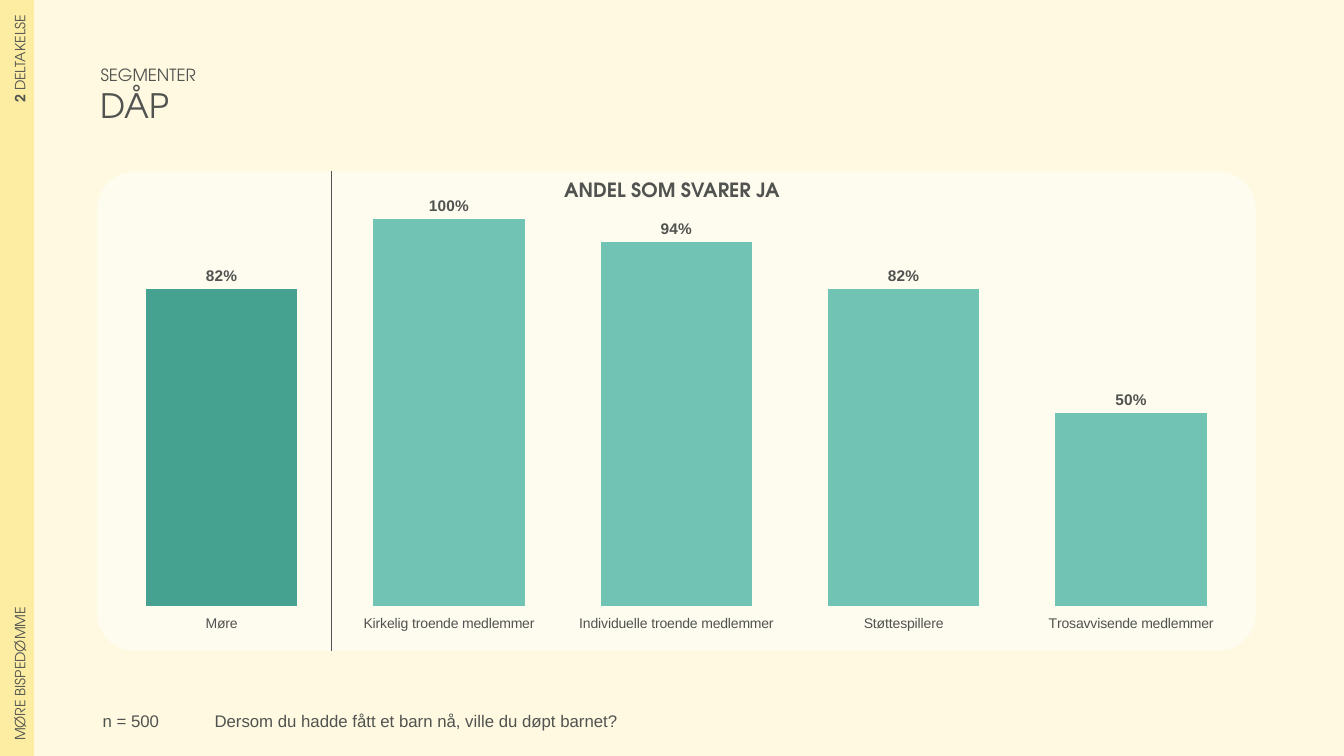
from lxml import etree
from pptx import Presentation
from pptx.chart.data import CategoryChartData
from pptx.dml.color import RGBColor
from pptx.enum.chart import XL_CHART_TYPE, XL_LABEL_POSITION, XL_TICK_LABEL_POSITION, XL_TICK_MARK
from pptx.enum.shapes import MSO_CONNECTOR, MSO_SHAPE
from pptx.enum.text import MSO_ANCHOR, PP_ALIGN
from pptx.oxml import parse_xml
from pptx.oxml.ns import nsdecls, qn
from pptx.util import Inches, Pt

COLUMN_CHART = XL_CHART_TYPE.COLUMN_CLUSTERED
OUTSIDE = XL_LABEL_POSITION.OUTSIDE_END
LOW = XL_TICK_LABEL_POSITION.LOW
NO_TICK = XL_TICK_MARK.NONE
STRAIGHT = MSO_CONNECTOR.STRAIGHT
ROUNDED = MSO_SHAPE.ROUNDED_RECTANGLE
TOP, MIDDLE = MSO_ANCHOR.TOP, MSO_ANCHOR.MIDDLE
LEFT, CENTER, RIGHT = PP_ALIGN.LEFT, PP_ALIGN.CENTER, PP_ALIGN.RIGHT

INK = RGBColor(0x51, 0x53, 0x50)
CREAM = RGBColor(0xFE, 0xF9, 0xE0)
YELLOW = RGBColor(0xFD, 0xED, 0xA2)
WHITE = RGBColor(0xFF, 0xFF, 0xFF)
MINT = RGBColor(0x71, 0xC3, 0xB3)
TEAL = RGBColor(0x45, 0xA2, 0x90)

HEADING, BODY = "TeX Gyre Adventor", "Arial"
COLUMNS, ROWS = 40, 30
PANEL_TOP, PANEL_ROWS = 6.8, 19.04


class Deck:
    """Holds the style and current slide, and places elements on a 40 by 30 grid."""

    def __init__(self):
        self.prs = Presentation()
        self.prs.slide_width, self.prs.slide_height = Inches(13.33), Inches(7.5)
        self.s = self.prs.slides.add_slide(self.prs.slide_layouts[6])
        self.s.background.fill.solid()
        self.s.background.fill.fore_color.rgb = CREAM

    def x(self, columns):
        return round(self.prs.slide_width * columns / COLUMNS)

    def y(self, rows):
        return round(self.prs.slide_height * rows / ROWS)

    def box(self, left, top, width, height):
        return self.x(left), self.y(top), self.x(width), self.y(height)

    def font(self, font, size, name, bold=False):
        font.size, font.name, font.bold = Pt(size), name, bold
        font.color.rgb = INK

    def text(self, place, lines, name, align=LEFT, anchor=TOP, bold=False):
        tf = self.s.shapes.add_textbox(*self.box(*place)).text_frame
        tf.word_wrap = True
        tf.vertical_anchor = anchor
        tf.text = "\n".join(line for line, _ in lines)
        for p, (_, size) in zip(tf.paragraphs, lines):
            p.alignment = align
            self.font(p.runs[0].font, size, name, bold)

    def sidebar(self, place, entries):
        table = self.s.shapes.add_table(len(entries), 1, *self.box(*place)).table
        table.first_row = table.horz_banding = False
        for row, (runs, align) in enumerate(entries):
            cell = table.cell(row, 0)
            tc_pr = cell._tc.get_or_add_tcPr()
            tc_pr.set("vert", "vert270")
            for side in ("lnL", "lnR", "lnT", "lnB"):
                border = etree.SubElement(tc_pr, qn("a:" + side), w="0")
                etree.SubElement(border, qn("a:noFill"))
            cell.fill.solid()
            cell.fill.fore_color.rgb = YELLOW
            cell.margin_left = cell.margin_right = Inches(0.15)
            cell.margin_top = cell.margin_bottom = Inches(0.15)
            cell.vertical_anchor = MIDDLE
            p = cell.text_frame.paragraphs[0]
            p.alignment = align
            for words, bold in runs:
                r = p.add_run()
                r.text = words
                self.font(r.font, 10, HEADING, bold)

    def panel(self, place, corner, opacity):
        sp = self.s.shapes.add_shape(ROUNDED, *self.box(*place))
        sp.adjustments[0] = corner
        sp.shadow.inherit = False
        sp.line.fill.background()
        sp.fill.solid()
        sp.fill.fore_color.rgb = WHITE
        color = sp._element.spPr.find(qn("a:solidFill"))[0]
        etree.SubElement(color, qn("a:alpha"), val=str(opacity * 1000))

    def rule(self, column, top, bottom):
        x = self.x(column)
        line = self.s.shapes.add_connector(STRAIGHT, x, self.y(top), x, self.y(bottom))
        line.line.color.rgb, line.line.width = INK, Pt(0.5)
        etree.SubElement(line._element.spPr, qn("a:effectLst"))

    def columns(self, place, shares, layout):
        data = CategoryChartData(number_format="0%")
        data.categories = list(shares)
        data.add_series("Series 1", list(shares.values()))
        chart = self.s.shapes.add_chart(COLUMN_CHART, *self.box(*place), data).chart
        chart.has_legend = chart.has_title = False
        self.font(chart.font, 10, HEADING)
        axis = chart.category_axis
        axis.major_tick_mark = axis.minor_tick_mark = NO_TICK
        axis.tick_label_position = LOW
        axis.format.line.fill.background()
        self.font(axis.tick_labels.font, 10, BODY)
        scale = chart.value_axis
        scale.minimum_scale, scale.maximum_scale = 0, 1
        scale.has_major_gridlines = scale.visible = False
        plot = chart.plots[0]
        plot.gap_width, plot.vary_by_categories = 50, False
        series = plot.series[0]
        for part, color in ((series, MINT), (series.points[0], TEAL)):
            part.format.fill.solid()
            part.format.fill.fore_color.rgb = color
        labels = series.data_labels
        labels.show_value, labels.position = True, OUTSIDE
        labels.number_format, labels.number_format_is_linked = "0%", False
        self.font(labels.font, 11, BODY, True)
        self.plot_layout(chart, layout)

    def plot_layout(self, chart, layout):
        area = chart._chartSpace.chart.plotArea
        for old in area.findall(qn("c:layout")):
            area.remove(old)
        edges = "".join(f'<c:{key} val="{val}"/>' for key, val in layout.items())
        area.insert(0, parse_xml(
            f'<c:layout {nsdecls("c")}><c:manualLayout><c:layoutTarget val="inner"/>'
            f'<c:xMode val="edge"/><c:yMode val="edge"/>{edges}'
            '</c:manualLayout></c:layout>'))


def main():
    deck = Deck()
    deck.sidebar((0, 0, 1.02, ROWS), [
        ([("2", True), (" DELTAKELSE", False)], RIGHT),
        ([("MØRE BISPEDØMME", False)], LEFT),
    ])
    deck.text((2.7, 2.36, 31.65, 2.84), [("SEGMENTER", 12), ("DÅP", 24)],
              HEADING, anchor=MIDDLE)
    deck.text((6.09, 28, 31.17, 1.08),
              [("Dersom du hadde fått et barn nå, ville du døpt barnet?", 12)], BODY)
    deck.text((2.76, 28, 4.29, 1.08), [("n = 500", 12)], BODY)
    deck.panel((2.88, PANEL_TOP, 34.5, PANEL_ROWS), 0.08, 50)
    deck.columns((2.76, PANEL_TOP, 34.74, PANEL_ROWS), {
        "Møre": 0.82,
        "Kirkelig troende medlemmer": 1,
        "Individuelle troende medlemmer": 0.94,
        "Støttespillere": 0.82,
        "Trosavvisende medlemmer": 0.5,
    }, {"x": 0.013, "y": 0.099, "w": 0.974, "h": 0.808})
    deck.rule(9.87, PANEL_TOP, PANEL_TOP + PANEL_ROWS)
    deck.text((10, 6.88, 20, 1.36), [("ANDEL SOM SVARER JA", 14)],
              HEADING, align=CENTER, bold=True)
    deck.prs.save("out.pptx")


if __name__ == "__main__":
    main()
